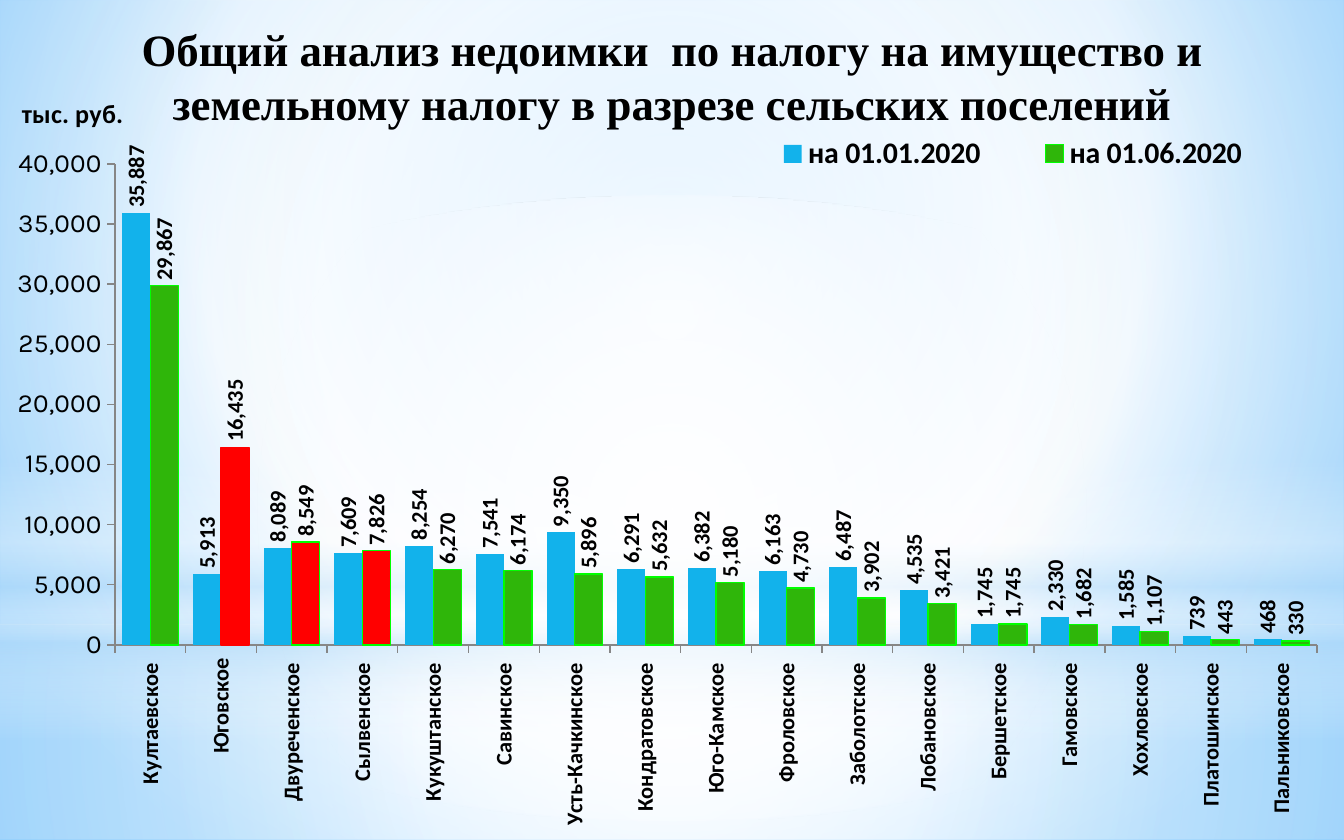
from lxml import etree
from pptx import Presentation
from pptx.chart.data import CategoryChartData
from pptx.dml.color import RGBColor
from pptx.enum.chart import XL_CHART_TYPE, XL_LABEL_POSITION, XL_LEGEND_POSITION, XL_TICK_MARK
from pptx.enum.shapes import MSO_SHAPE
from pptx.enum.text import MSO_ANCHOR, MSO_AUTO_SIZE, PP_ALIGN
from pptx.oxml import parse_xml
from pptx.oxml.ns import nsdecls, qn
from pptx.util import Emu, Pt

PX = 914400 / 134.4
COLORS = {
    "black": "000000", "white": "FFFFFF", "pale": "B4DCFA",
    "sky": "9ED5FF", "deep": "5BB9FF", "axis": "868686",
    "before": "12B2EB", "after": "2FB60A", "growth": "FF0000", "edge": "00FF00",
}
CHART_BOX = (16, 67, 1312, 770)
CENTER = (50, 50, 50, 50)
DATES = ("на 01.01.2020", "на 01.06.2020")
DEBTS = [
    ("Култаевское ", 35887, 29867),
    ("Юговское", 5913, 16435),
    ("Двуреченское ", 8089, 8549),
    ("Сылвенское ", 7609, 7826),
    ("Кукуштанское ", 8254, 6270),
    ("Савинское ", 7541, 6174),
    ("Усть-Качкинское ", 9350, 5896),
    ("Кондратовское ", 6291, 5632),
    ("Юго-Камское ", 6382, 5180),
    ("Фроловское ", 6163, 4730),
    ("Заболотское ", 6487, 3902),
    ("Лобановское ", 4535, 3421),
    ("Бершетское ", 1745, 1745),
    ("Гамовское ", 2330, 1682),
    ("Хохловское ", 1585, 1107),
    ("Платошинское ", 739, 443),
    ("Пальниковское ", 468, 330),
]


def px(*values):
    return [Emu(round(v * PX)) for v in values]


def rgb(name):
    return RGBColor.from_string(COLORS[name])


def set_font(font, size, name="Calibri", bold=True, color="black"):
    font.size, font.name, font.bold = Pt(size), name, bold
    font.color.rgb = rgb(color)


def set_text(tf, text, align=None, spacing=None, **fmt):
    p = tf.paragraphs[0]
    p.alignment, p.line_spacing = align, spacing
    r = p.add_run()
    r.text = text
    set_font(r.font, **fmt)


def gradient(fill, props, stops, to=None):
    fill.solid()
    grad = parse_xml(f'<a:gradFill {nsdecls("a")} rotWithShape="1"><a:gsLst/></a:gradFill>')
    for pos, color, alpha in stops:
        gs = etree.SubElement(grad[0], qn("a:gs"), pos=str(pos * 1000))
        clr = etree.SubElement(gs, qn("a:srgbClr"), val=COLORS[color])
        etree.SubElement(clr, qn("a:alpha"), val=str(alpha * 1000))
    if to:
        path = etree.SubElement(grad, qn("a:path"), path="circle")
        edges = {k: str(v * 1000) for k, v in zip("ltrb", to)}
        etree.SubElement(path, qn("a:fillToRect"), **edges)
    else:
        etree.SubElement(grad, qn("a:lin"), ang="5400000", scaled="0")
    solid = props.find(qn("a:solidFill"))
    solid.getparent().replace(solid, grad)


def add_glow(s, kind, box, stops, to=None):
    sp = s.shapes.add_shape(kind, *px(*box))
    sp.shadow.inherit = False
    sp.line.fill.background()
    gradient(sp.fill, sp.element.spPr, stops, to)


def add_background(s):
    fill = s.background.fill
    fill.solid()
    gradient(fill, s.element.find(".//" + qn("p:bgPr")),
             [(0, "sky", 100), (60, "white", 100), (100, "deep", 100)], (20, 10, 20, 60))
    rect, oval = MSO_SHAPE.RECTANGLE, MSO_SHAPE.OVAL
    add_glow(s, rect, (0, 625, 1344, 215),
             [(0, "white", 91), (37, "white", 76), (100, "pale", 79)], CENTER)
    add_glow(s, rect, (0, 0, 1344, 625),
             [(0, "white", 89), (48, "white", 62), (100, "pale", 79)], CENTER)
    add_glow(s, rect, (0, 461, 1344, 280),
             [(0, "white", 0), (29, "white", 30), (45, "pale", 40),
              (55, "white", 26), (65, "pale", 60), (100, "white", 0)])
    add_glow(s, oval, (0, 196, 1344, 625), [(0, "white", 100), (56, "white", 0)], CENTER)


def add_title(s, text):
    sp = s.shapes.title
    sp.element.getparent().append(sp.element)
    sp.left, sp.top, sp.width, sp.height = px(16, 15, 1312, 70)
    tf = sp.text_frame
    tf.word_wrap, tf.auto_size = True, MSO_AUTO_SIZE.NONE
    tf.vertical_anchor = MSO_ANCHOR.TOP
    set_text(tf, text, PP_ALIGN.CENTER, 1.0, size=24, name="Times New Roman")


def place(parent, after, x, y, w=None, h=None, inner=False):
    old = parent.find(qn("c:layout"))
    if old is not None:
        parent.remove(old)
    layout = parse_xml(f'<c:layout {nsdecls("c")}><c:manualLayout/></c:layout>')
    manual = layout[0]
    if inner:
        etree.SubElement(manual, qn("c:layoutTarget"), val="inner")
    for axis in "xy":
        etree.SubElement(manual, qn(f"c:{axis}Mode"), val="edge")
    for key, value, total in zip("xywh", (x, y, w, h), CHART_BOX[2:] * 2):
        if value is not None:
            etree.SubElement(manual, qn(f"c:{key}"), val=f"{value / total:.4f}")
    index = parent.index(parent.find(qn(after))) + 1 if after else 0
    parent.insert(index, layout)


def format_axes(chart):
    cat, val = chart.category_axis, chart.value_axis
    for axis in (cat, val):
        axis.has_major_gridlines = False
        axis.major_tick_mark = XL_TICK_MARK.OUTSIDE
        axis.minor_tick_mark = XL_TICK_MARK.NONE
        axis.format.line.color.rgb = rgb("axis")
    set_font(cat.tick_labels.font, 12)
    set_font(val.tick_labels.font, 14, "Karla", False)
    val.minimum_scale, val.maximum_scale, val.major_unit = 0, 40000, 5000
    val.tick_labels.number_format = "#,##0"
    val.tick_labels.number_format_is_linked = False
    set_text(val.axis_title.text_frame, "тыс. руб.", size=14)


def format_series(series, color):
    series.format.fill.solid()
    series.format.fill.fore_color.rgb = rgb(color)
    series.invert_if_negative = False
    dl = series.data_labels
    dl.show_value = True
    dl.number_format, dl.number_format_is_linked = "#,##0", False
    dl.position = XL_LABEL_POSITION.OUTSIDE_END
    set_font(dl.font, 12)


def outline(fmt, color):
    fmt.line.color.rgb = rgb(color)
    fmt.line.width = Pt(0.75)


def add_debt_chart(s):
    data = CategoryChartData(number_format="#,##0")
    names, *columns = zip(*DEBTS)
    data.categories = names
    for date, values in zip(DATES, columns):
        data.add_series(date, values)
    chart = s.shapes.add_chart(XL_CHART_TYPE.COLUMN_CLUSTERED, *px(*CHART_BOX), data).chart
    chart.has_title = False
    set_font(chart.font, 18, "Karla", False)
    plot = chart.plots[0]
    plot.gap_width, plot.overlap, plot.vary_by_categories = 52, 0, False
    for series, color in zip(plot.series, ("before", "after")):
        format_series(series, color)
    after = plot.series[1]
    outline(after.format, "edge")
    for i, edge in ((1, "growth"), (2, "edge"), (3, "edge")):
        fmt = after.points[i].format
        fmt.fill.solid()
        fmt.fill.fore_color.rgb = rgb("growth")
        outline(fmt, edge)
    format_axes(chart)
    chart.has_legend = True
    chart.legend.position = XL_LEGEND_POSITION.BOTTOM
    chart.legend.include_in_layout = False
    set_font(chart.legend.font, 16)
    root = chart.element
    for body in root.xpath("//c:catAx/c:txPr/a:bodyPr | //c:dLbls/c:txPr/a:bodyPr"):
        body.set("rot", "-5400000")
        body.set("vert", "horz")
    title = root.xpath("//c:valAx/c:title")[0]
    title.find(".//" + qn("a:bodyPr")).set("rot", "0")
    place(title, "c:tx", 1, 23)
    place(root.xpath("//c:legend")[0], "c:legendPos", 713, 67, 568, 40)
    place(root.xpath("//c:plotArea")[0], None, 99, 97, 1202, 481, inner=True)


def main():
    prs = Presentation()
    prs.slide_width, prs.slide_height = px(1344, 840)
    s = prs.slides.add_slide(prs.slide_layouts[5])
    add_background(s)
    add_title(s, "Общий анализ недоимки  по налогу на имущество и "
                 "земельному налогу в разрезе сельских поселений")
    add_debt_chart(s)
    prs.save("out.pptx")


if __name__ == "__main__":
    main()
